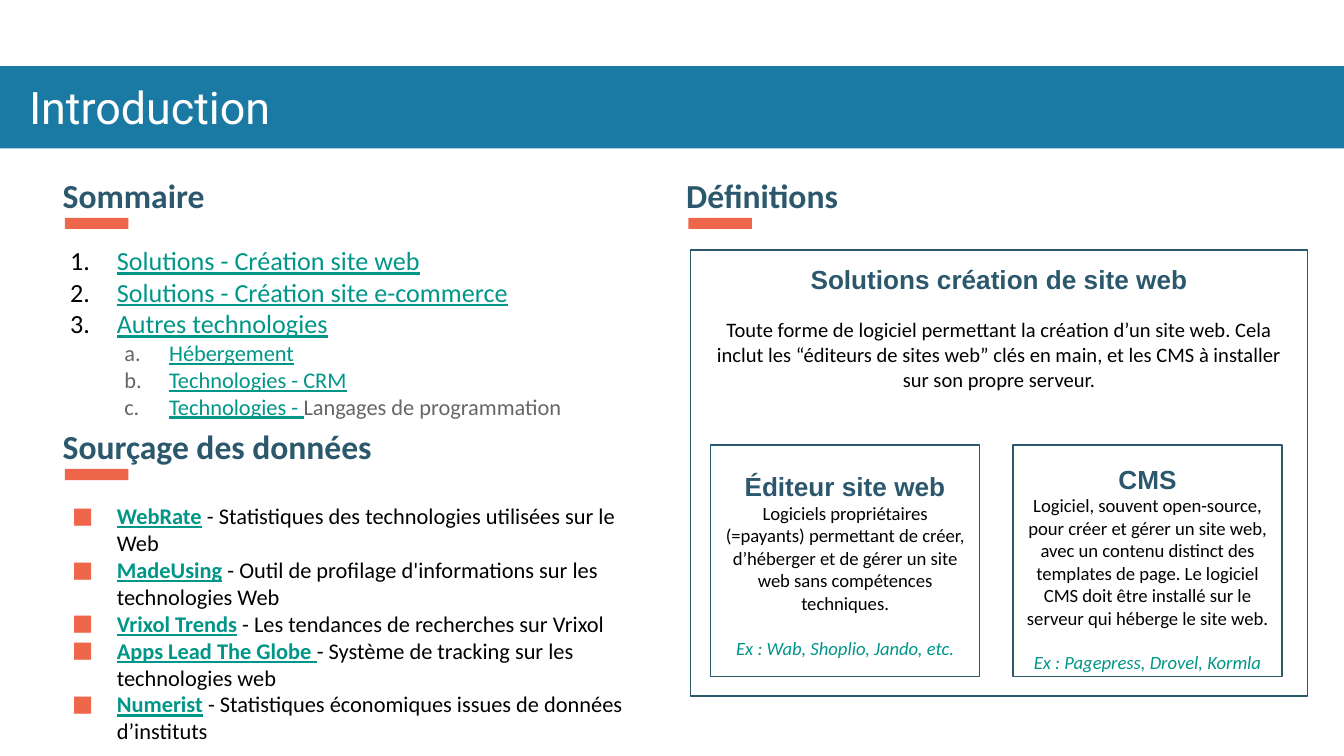
from lxml.etree import SubElement
from pptx import Presentation
from pptx.dml.color import RGBColor as RGB
from pptx.enum.shapes import MSO_SHAPE as Kind
from pptx.enum.text import MSO_ANCHOR as Anchor, PP_ALIGN as Align
from pptx.oxml.ns import qn
from pptx.util import Pt

# Content: a paragraph is a list of (style, text) runs
TITLE = "Introduction"
HEADS = [("Sommaire", 26.5, 86.5), ("Définitions", 360.5, 86.5),
         ("Sourçage des données", 26.5, 221)]
AGENDA = [
    ("num", [("link", "Solutions - Création site web")]),
    ("num", [("link", "Solutions - Création site e-commerce")]),
    ("num", [("link", "Autres technologies")]),
    ("sub", [("sublink", "Hébergement")]),
    ("sub", [("sublink", "Technologies - CRM")]),
    ("sub", [("sublink", "Technologies - "), ("grey", "Langages de programmation")]),
]
SOURCES = [
    ("WebRate", " - Statistiques des technologies utilisées sur le Web"),
    ("MadeUsing", " - Outil de profilage d'informations sur les technologies Web"),
    ("Vrixol Trends", " - Les tendances de recherches sur Vrixol"),
    ("Apps Lead The Globe ", "- Système de tracking sur les technologies web"),
    ("Numerist", " - Statistiques économiques issues de données d’instituts"),
]
MAIN = ("Solutions création de site web",
        "Toute forme de logiciel permettant la création d’un site web. Cela inclut "
        "les “éditeurs de sites web” clés en main, et les CMS à installer sur son "
        "propre serveur.")
CARDS = [
    ("Éditeur site web",
     "Logiciels propriétaires (=payants) permettant de créer, d’héberger et de gérer "
     "un site web sans compétences techniques.",
     "Ex : Wab, Shoplio, Jando, etc.", 4),
    ("CMS",
     "Logiciel, souvent open-source, pour créer et gérer un site web, avec un contenu "
     "distinct des templates de page. Le logiciel CMS doit être installé sur le "
     "serveur qui héberge le site web.",
     "Ex : Pagepress, Drovel, Kormla", 8),
]

# Theme: colours, type styles and list styles
BLUE, NAVY, CORAL, TEAL = "1A7AA4", "2B586C", "EF674B", "009688"
BLACK, GREY, WHITE = "000000", "666666", "FFFFFF"


def font(name, size, color, **more):
    return {"name": name, "size": Pt(size), "color": color, **more}


THEME = {
    "title": font("Roboto", 24, WHITE),
    "head": font("Calibri", 18, NAVY, bold=True),
    "link": font("Calibri", 14, TEAL, underline=True),
    "sublink": font("Calibri", 12, TEAL, underline=True),
    "grey": font("Calibri", 12, GREY),
    "source": font("Calibri", 12, TEAL, bold=True, underline=True),
    "note": font("Calibri", 12, BLACK),
    "box": font("Arial", 14, NAVY, bold=True),
    "main": font("Calibri", 11, BLACK),
    "body": font("Calibri", 10, BLACK),
    "sample": font("Calibri", 10, TEAL, italic=True),
}
LISTS = {  # level, left margin, hang, colour, tag, attributes
    "num": (0, 36, 25, BLACK, "a:buAutoNum", {"type": "arabicPeriod"}),
    "sub": (1, 64, 24, GREY, "a:buAutoNum", {"type": "alphaLcPeriod"}),
    "dot": (0, 36, 24, CORAL, "a:buChar", {"char": "■"}),
}


def bullet(par, key):
    level, left, hang, color, tag, attrs = LISTS[key]
    par.level = level
    props = par._p.get_or_add_pPr()
    props.set("marL", str(Pt(left)))
    props.set("indent", str(-Pt(hang)))
    SubElement(SubElement(props, qn("a:buClr")), qn("a:srgbClr"), val=color)
    SubElement(props, qn("a:buFont"), typeface="Calibri")
    SubElement(props, qn(tag), **attrs)


def write(shape, pars, align=Align.LEFT, anchor=Anchor.TOP, top=7.2, low=7.2):
    """Each paragraph is (list style or None, runs, space after)."""
    frame = shape.text_frame
    form = {"word_wrap": True, "vertical_anchor": anchor, "margin_left": Pt(7.2),
            "margin_right": Pt(7.2), "margin_top": Pt(top), "margin_bottom": Pt(low)}
    for name, value in form.items():
        setattr(frame, name, value)
    for i, (key, runs, *gap) in enumerate(pars):
        par = frame.add_paragraph() if i else frame.paragraphs[0]
        par.alignment = align
        if gap:
            par.space_after = Pt(gap[0])
        if key:
            bullet(par, key)
        for style, text in runs:
            run = par.add_run()
            run.text = text
            for name, value in THEME[style].items():
                if name == "color":
                    run.font.color.rgb = RGB.from_string(value)
                else:
                    setattr(run.font, name, value)


def rect(x, y, w, h, fill=None, line=None):
    shape = slide.shapes.add_shape(Kind.RECTANGLE, Pt(x), Pt(y), Pt(w), Pt(h))
    shape.shadow.inherit = False
    if fill:
        shape.fill.solid()
        shape.fill.fore_color.rgb = RGB.from_string(fill)
    else:
        shape.fill.background()
    if line:
        shape.line.color.rgb = RGB.from_string(line)
        shape.line.width = Pt(0.75)
    else:
        shape.line.fill.background()
    return shape


def label(x, y, w, h, pars, **more):
    write(slide.shapes.add_textbox(Pt(x), Pt(y), Pt(w), Pt(h)), pars, **more)


deck = Presentation()
deck.slide_width, deck.slide_height = Pt(720), Pt(405)
slide = deck.slides.add_slide(deck.slide_layouts[6])

# Title band
rect(0, 35.5, 720, 44, BLUE)
label(8.5, 35.5, 644.5, 44, [(None, [("title", TITLE)])])

# Section heads, each with a short bar
for text, x, y in HEADS:
    label(x, y, 203, 36, [(None, [("head", text)])])
    rect(x + 8.3, y + 30.2, 34, 6, CORAL)

# Agenda and sources
label(19.5, 124, 303, 105, AGENDA)
label(19.5, 262, 330.5, 130,
      [("dot", [("source", name), ("note", note)]) for name, note in SOURCES])

# Definition box
head, text = MAIN
write(rect(370, 134, 330.5, 239, WHITE, NAVY),
      [(None, [("box", head)], 12), (None, [("main", text)])], align=Align.CENTER)

# Cards inside it
for i, (head, text, sample, top) in enumerate(CARDS):
    write(rect(380.75 + 162 * i, 238.5, 144, 124, line=NAVY),
          [(None, [("box", head)]), (None, [("body", text)], 12),
           (None, [("sample", sample)])],
          align=Align.CENTER, anchor=Anchor.MIDDLE, top=top, low=0)

deck.save("out.pptx")
